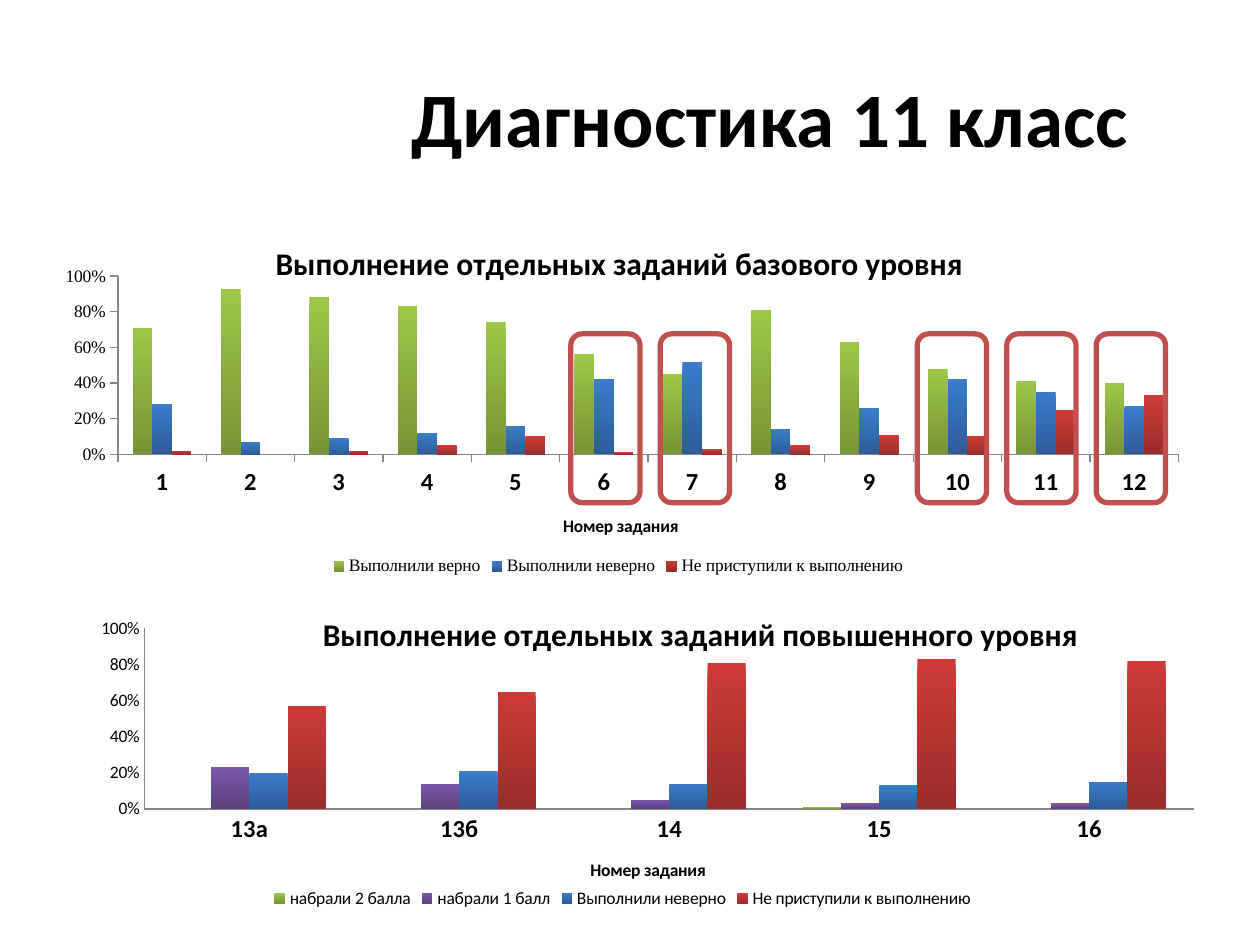
"""Build the slide on the grade 11 diagnostics."""
from lxml.etree import SubElement
from pptx import Presentation
from pptx.chart.data import CategoryChartData
from pptx.dml.color import RGBColor
from pptx.enum.chart import XL_CHART_TYPE, XL_LEGEND_POSITION, XL_TICK_MARK
from pptx.enum.shapes import MSO_SHAPE
from pptx.enum.text import MSO_ANCHOR, PP_ALIGN
from pptx.oxml.ns import qn
from pptx.util import Inches, Pt

THEME = {
    "font": "Calibri", "serif": "Times New Roman", "ink": "000000",
    "axis": "878787", "mark": "C0504D",
    "big": 44, "head": 18, "tick": 14, "base": 10,
    "green": ("9CC746", "769535"), "violet": ("7B57A8", "5D417E"),
    "blue": ("3A7CCB", "2C5D98"), "red": ("CE3B37", "9B2D2A"),
}
TITLE = "Диагностика 11 класс"
WRONG, NONE = "Выполнили неверно", "Не приступили к выполнению"
CHARTS = [
    {
        "at": (0.3, 1.7, 9.21, 2.91),
        "title": "Выполнение отдельных заданий базового уровня",
        "spot": (0.2, 0.06), "label": (0.45, 0.81),
        "plot": (0.069, 0.169, 0.914, 0.486),
        "font": THEME["serif"], "tick": XL_TICK_MARK.OUTSIDE,
        "cats": [str(n) for n in range(1, 13)],
        "rows": [
            ("Выполнили верно", "green",
             (0.71, 0.93, 0.88, 0.83, 0.74, 0.56, 0.45, 0.81, 0.63, 0.48, 0.41, 0.4)),
            (WRONG, "blue",
             (0.28, 0.07, 0.09, 0.12, 0.16, 0.42, 0.52, 0.14, 0.26, 0.42, 0.35, 0.27)),
            (NONE, "red",
             (0.02, 0, 0.02, 0.05, 0.1, 0.01, 0.03, 0.05, 0.11, 0.1, 0.25, 0.33)),
        ],
    },
    {
        "at": (0.28, 4.69, 9.32, 2.56),
        "title": "Выполнение отдельных заданий повышенного уровня",
        "spot": (0.24, 0.05), "label": (0.47, 0.82),
        "plot": (0.093, 0.116, 0.894, 0.56),
        "font": THEME["font"], "tick": XL_TICK_MARK.NONE,
        "cats": ["13а", "13б", "14", "15", "16"],
        "rows": [
            ("набрали 2 балла", "green", (None, None, None, 0.01, None)),
            ("набрали 1 балл", "violet", (0.23, 0.14, 0.05, 0.03, 0.03)),
            (WRONG, "blue", (0.2, 0.21, 0.14, 0.13, 0.15)),
            (NONE, "red", (0.57, 0.65, 0.81, 0.83, 0.82)),
        ],
    },
]
MARKS = [(4.53, 2), (7.28, 3)]
STEP, TOP, WIDE, HIGH = 0.71, 2.65, 0.55, 1.34


def color(name):
    return RGBColor.from_string(name)


def style(font, size=THEME["base"], bold=False, face=THEME["font"]):
    font.size, font.bold, font.name = Pt(size), bold, face
    font.color.rgb = color(THEME["ink"])


def write(frame, text, align=PP_ALIGN.CENTER, **look):
    para = frame.paragraphs[0]
    para.alignment = align
    run = para.add_run()
    run.text = text
    style(run.font, **look)


def place(node, index, box, inner=False):
    for old in node.findall(qn("c:layout")):
        node.remove(old)
    outer = SubElement(node, qn("c:layout"))
    node.insert(index, outer)
    body = SubElement(outer, qn("c:manualLayout"))
    pairs = [("layoutTarget", "inner")] if inner else []
    pairs += [("xMode", "edge"), ("yMode", "edge"), *zip("xywh", box)]
    for tag, val in pairs:
        SubElement(body, qn("c:" + tag)).set("val", str(val))


def label(title, text, spot, size):
    write(title.text_frame, text, size=size, bold=True)
    place(title._element, 1, spot)


def paint(fill, tones):
    fill.gradient()
    fill.gradient_angle = 270
    for stop, tone in zip(fill.gradient_stops, tones):
        stop.color.rgb = color(tone)


def draw(slide, item):
    data = CategoryChartData(number_format="0%")
    data.categories = item["cats"]
    for name, _, vals in item["rows"]:
        data.add_series(name, vals)
    chart = slide.shapes.add_chart(
        XL_CHART_TYPE.COLUMN_CLUSTERED, *map(Inches, item["at"]), data).chart
    style(chart.font)
    chart.has_title = True
    label(chart.chart_title, item["title"], item["spot"], THEME["head"])
    chart.chart_title.include_in_layout = True
    place(chart._chartSpace.chart.plotArea, 0, item["plot"], True)
    chart.has_legend = True
    chart.legend.position = XL_LEGEND_POSITION.BOTTOM
    chart.legend.include_in_layout = False
    style(chart.legend.font, face=item["font"])
    plot = chart.plots[0]
    plot.gap_width, plot.overlap, plot.vary_by_categories = 150, 0, False
    for bar, row in zip(plot.series, item["rows"]):
        bar.invert_if_negative = False
        paint(bar.format.fill, THEME[row[1]])
    cat, val = chart.category_axis, chart.value_axis
    for axis in (cat, val):
        axis.has_major_gridlines = False
        axis.major_tick_mark = item["tick"]
        axis.minor_tick_mark = XL_TICK_MARK.NONE
        axis.format.line.color.rgb = color(THEME["axis"])
        axis.format.line.width = Pt(0.75)
    style(cat.tick_labels.font, size=THEME["tick"], bold=True)
    label(cat.axis_title, "Номер задания", item["label"], THEME["base"])
    style(val.tick_labels.font, face=item["font"])
    val.tick_labels.number_format = "0%"
    val.tick_labels.number_format_is_linked = False
    val.minimum_scale, val.maximum_scale, val.major_unit = 0, 1, 0.2


def mark(slide, left):
    box = slide.shapes.add_shape(
        MSO_SHAPE.ROUNDED_RECTANGLE, *map(Inches, (left, TOP, WIDE, HIGH)))
    box.shadow.inherit = False
    box.fill.background()
    box.line.color.rgb = color(THEME["mark"])
    box.line.width = Pt(3)


def main():
    deck = Presentation()
    deck.slide_width, deck.slide_height = Inches(10), Inches(7.5)
    slide = deck.slides.add_slide(deck.slide_layouts[6])
    box = slide.shapes.add_textbox(*map(Inches, (2.72, 0.3, 6.78, 1.25)))
    box.text_frame.word_wrap = True
    box.text_frame.vertical_anchor = MSO_ANCHOR.MIDDLE
    write(box.text_frame, TITLE, size=THEME["big"], bold=True)
    for item in CHARTS:
        draw(slide, item)
    for left, count in MARKS:
        for n in range(count):
            mark(slide, left + n * STEP)
    deck.save("out.pptx")


if __name__ == "__main__":
    main()
